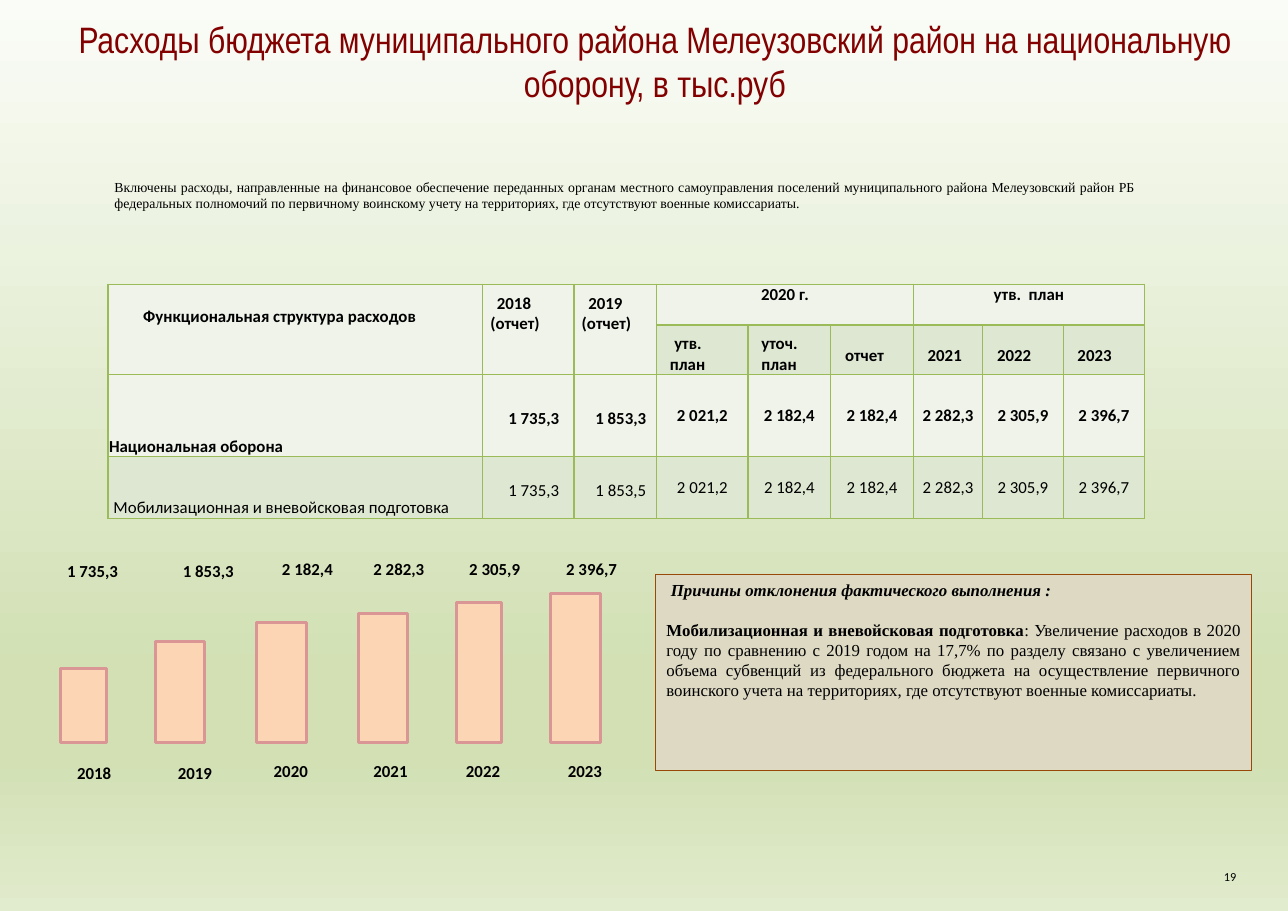
from pptx import Presentation
from pptx.dml.color import RGBColor
from pptx.enum.shapes import MSO_SHAPE
from pptx.enum.text import MSO_ANCHOR, MSO_AUTO_SIZE, PP_ALIGN
from pptx.oxml import parse_xml
from pptx.oxml.ns import nsdecls, qn
from pptx.util import Inches, Pt

LEFT, CENTER, JUSTIFY = PP_ALIGN.LEFT, PP_ALIGN.CENTER, PP_ALIGN.JUSTIFY
TOP, MIDDLE, BOTTOM = MSO_ANCHOR.TOP, MSO_ANCHOR.MIDDLE, MSO_ANCHOR.BOTTOM
RECTANGLE = MSO_SHAPE.RECTANGLE
FIXED_SIZE = MSO_AUTO_SIZE.NONE
TITLE_ONLY = 5
PLAIN_TABLE_STYLE = "{2D5ABB26-0587-4C30-8999-92F81FD0307C}"
BACKGROUND_STOPS = [(0, "FAFCF7"), (74, "D2E0B4"), (83, "D2E0B4"), (100, "E1EBCD")]
LIGHT, DARK, GREEN = "EFF3EA", "DEE7D1", "9BBB59"
SERIF = "Times New Roman"


def color(hex_text):
    return RGBColor.from_string(hex_text)


def add_span(para, text, size=11, font="Calibri", ink="000000", bold=False, italic=False):
    span = para.add_run()
    span.text = text
    span.font.size = Pt(size)
    span.font.name = font
    span.font.color.rgb = color(ink)
    span.font.bold = bold
    span.font.italic = italic


def indent(para, inches):
    para._p.get_or_add_pPr().set("marL", str(Inches(inches)))


def set_margins(owner, left=0, top=0, right=0, bottom=0):
    """Set the inner margins, in inches, of a text frame or a table cell."""
    owner.margin_left, owner.margin_top = Inches(left), Inches(top)
    owner.margin_right, owner.margin_bottom = Inches(right), Inches(bottom)


def add_borders(cell, line_color):
    properties = cell._tc.get_or_add_tcPr()
    for side in ("lnL", "lnR", "lnT", "lnB"):
        properties.append(parse_xml(
            f'<a:{side} {nsdecls("a")} w="{Pt(1)}"><a:solidFill>'
            f'<a:srgbClr val="{line_color}"/></a:solidFill></a:{side}>'))


class BudgetPage:
    """The current slide and the style of its elements."""

    def __init__(self, deck):
        self.page = deck.slides.add_slide(deck.slide_layouts[TITLE_ONLY])

    def background(self, stops):
        fill = self.page.background.fill
        fill.gradient()
        fill.gradient_angle = 270
        stop_list = self.page._element.find(".//" + qn("a:gsLst"))
        for stop in list(stop_list):
            stop_list.remove(stop)
        for percent, hex_text in stops:
            stop_list.append(parse_xml(
                f'<a:gs {nsdecls("a")} pos="{percent * 1000}">'
                f'<a:srgbClr val="{hex_text}"/></a:gs>'))

    def title(self, text, left, top, width, height):
        box = self.page.shapes.title
        box.left, box.top = Inches(left), Inches(top)
        box.width, box.height = Inches(width), Inches(height)
        frame = box.text_frame
        frame.auto_size = FIXED_SIZE
        frame.word_wrap = True
        frame.vertical_anchor = TOP
        set_margins(frame, top=0.02)
        para = frame.paragraphs[0]
        para.alignment = CENTER
        add_span(para, text, size=24, font="Arial Narrow", ink="820000")

    def text(self, text, left, top, width, height, align=LEFT, anchor=TOP, **style):
        box = self.page.shapes.add_textbox(
            Inches(left), Inches(top), Inches(width), Inches(height))
        frame = box.text_frame
        frame.word_wrap = True
        frame.vertical_anchor = anchor
        para = frame.paragraphs[0]
        para.alignment = align
        add_span(para, text, **style)

    def rectangle(self, left, top, width, height, fill, line, line_width):
        box = self.page.shapes.add_shape(
            RECTANGLE, Inches(left), Inches(top), Inches(width), Inches(height))
        box.shadow.inherit = False
        box.fill.solid()
        box.fill.fore_color.rgb = color(fill)
        box.line.color.rgb = color(line)
        box.line.width = Pt(line_width)
        return box

    def table(self, left, top, widths, heights):
        frame = self.page.shapes.add_table(
            len(heights), len(widths), Inches(left), Inches(top),
            Inches(sum(widths)), Inches(sum(heights)))
        table = frame.table
        table._tbl.tblPr.find(qn("a:tableStyleId")).text = PLAIN_TABLE_STYLE
        table.first_row = table.horz_banding = False
        for column, width in zip(table.columns, widths):
            column.width = Inches(width)
        for row, height in zip(table.rows, heights):
            row.height = Inches(height)
        for cell in table.iter_cells():
            set_margins(cell)
        return table

    def cell(self, cell, *lines, left=0, top=0, align=LEFT, anchor=TOP, fill=None, bold=True):
        """Fill a cell; each line is a text or a (text, indent) pair."""
        set_margins(cell, left=left, top=top)
        cell.vertical_anchor = anchor
        for number, line in enumerate(lines):
            text, shift = (line, 0) if isinstance(line, str) else line
            frame = cell.text_frame
            para = frame.add_paragraph() if number else frame.paragraphs[0]
            indent(para, shift)
            para.alignment = align
            add_span(para, text, bold=bold)
        if fill:
            cell.fill.solid()
            cell.fill.fore_color.rgb = color(fill)

    def value(self, cell, text, is_report, **style):
        """Centre a figure; report years sit slightly right and low."""
        left, top = (0.1, 0.05) if is_report else (0, 0.01)
        self.cell(cell, text, left=left, top=top, align=CENTER, anchor=MIDDLE, **style)

    def label_row(self, left, top, widths, labels):
        table = self.table(left, top, widths, [0.23])
        for column, label in enumerate(labels):
            self.value(table.cell(0, column), label, column < 2)


def add_expense_table(slide):
    table = slide.table(0.98, 2.58, [3.4, 0.83, 0.75, 0.83, 0.75, 0.75, 0.63, 0.73, 0.74],
                        [0.37, 0.44, 0.75, 0.56])
    for cell in table.iter_cells():
        add_borders(cell, GREEN)
    for column in range(3):
        table.cell(0, column).merge(table.cell(1, column))
    for column in (3, 6):
        table.cell(0, column).merge(table.cell(0, column + 2))

    slide.cell(table.cell(0, 0), "Функциональная структура расходов",
               left=0.32, top=0.2, fill=LIGHT)
    for column, year in enumerate(("2018", "2019"), 1):
        slide.cell(table.cell(0, column), (year, 0.13), ("(отчет)", 0.07), top=0.08, fill=LIGHT)
    for column, group in ((3, "2020 г."), (6, "утв.  план")):
        slide.cell(table.cell(0, column), group, align=CENTER, fill=LIGHT)
    slide.cell(table.cell(1, 3), ("утв.", 0.16), ("план", 0.12), top=0.08, fill=DARK)
    slide.cell(table.cell(1, 4), ("уточ.", 0.12), ("план", 0.12), top=0.08, fill=DARK)
    for column, heading in enumerate(("отчет", "2021", "2022", "2023"), 5):
        slide.cell(table.cell(1, column), heading, left=0.13, top=0.19, fill=DARK)

    plans = ["2 021,2", "2 182,4", "2 182,4", "2 282,3", "2 305,9", "2 396,7"]
    rows = [("Национальная оборона", 0.01, ["1 735,3", "1 853,3"], LIGHT, True),
            ("Мобилизационная и вневойсковая подготовка", 0.05, ["1 735,3", "1 853,5"], DARK, False)]
    for row, (name, left, reports, fill, bold) in enumerate(rows, 2):
        slide.cell(table.cell(row, 0), name, left=left, anchor=BOTTOM, fill=fill, bold=bold)
        for column, number in enumerate(reports + plans, 1):
            slide.value(table.cell(row, column), number, column < 3, fill=fill, bold=bold)


def add_bars(slide):
    base = 6.74
    bars = [(0.55, 0.42, 0.67), (1.41, 0.45, 0.92), (2.33, 0.45, 1.09),
            (3.25, 0.45, 1.17), (4.14, 0.41, 1.27), (5, 0.45, 1.35)]
    for left, width, height in bars:
        slide.rectangle(left, base - height, width, height, "FCD5B5", "D99694", 2)
    slide.label_row(0.29, 5.05, [1, 1.1, 0.8, 0.86, 0.88, 0.88],
                    ["1 735,3", "1 853,3", "2 182,4", "2 282,3", "2 305,9", "2 396,7"])
    slide.label_row(0.32, 6.88, [0.97, 0.86, 0.98, 0.83, 0.85, 1], map(str, range(2018, 2024)))


def add_reasons(slide):
    box = slide.rectangle(5.95, 5.21, 5.41, 1.78, "DDD9C3", "984807", 0.25)
    frame = box.text_frame
    frame.word_wrap = True
    frame.vertical_anchor = TOP
    heading = frame.paragraphs[0]
    heading.alignment = LEFT
    indent(heading, 0.04)
    add_span(heading, "Причины отклонения фактического выполнения :", font=SERIF, bold=True, italic=True)
    reason = frame.add_paragraph()
    reason.alignment = JUSTIFY
    reason.space_before = Pt(13)
    add_span(reason, "Мобилизационная и вневойсковая подготовка", font=SERIF, bold=True)
    add_span(reason, ": Увеличение расходов в 2020 году по сравнению с 2019 годом на 17,7% по разделу "
             "связано с увеличением объема субвенций из федерального бюджета на осуществление "
             "первичного воинского учета на территориях, где отсутствуют военные комиссариаты.", font=SERIF)


def main():
    deck = Presentation()
    deck.slide_width, deck.slide_height = Inches(11.69), Inches(8.27)
    slide = BudgetPage(deck)
    slide.background(BACKGROUND_STOPS)
    slide.title("Расходы бюджета муниципального района Мелеузовский район на национальную "
                "оборону, в тыс.руб", 0.54, 0.13, 10.81, 0.82)
    slide.text("Включены расходы, направленные на финансовое обеспечение переданных органам местного "
               "самоуправления поселений муниципального района Мелеузовский район РБ федеральных "
               "полномочий по первичному воинскому учету на территориях, где отсутствуют военные "
               "комиссариаты.", 0.94, 1.57, 9.45, 0.4, align=JUSTIFY, size=9, font=SERIF)
    add_expense_table(slide)
    add_bars(slide)
    add_reasons(slide)
    slide.text("19", 11.01, 7.84, 0.31, 0.24, align=CENTER, anchor=MIDDLE, size=8)
    deck.save("out.pptx")


if __name__ == "__main__":
    main()
